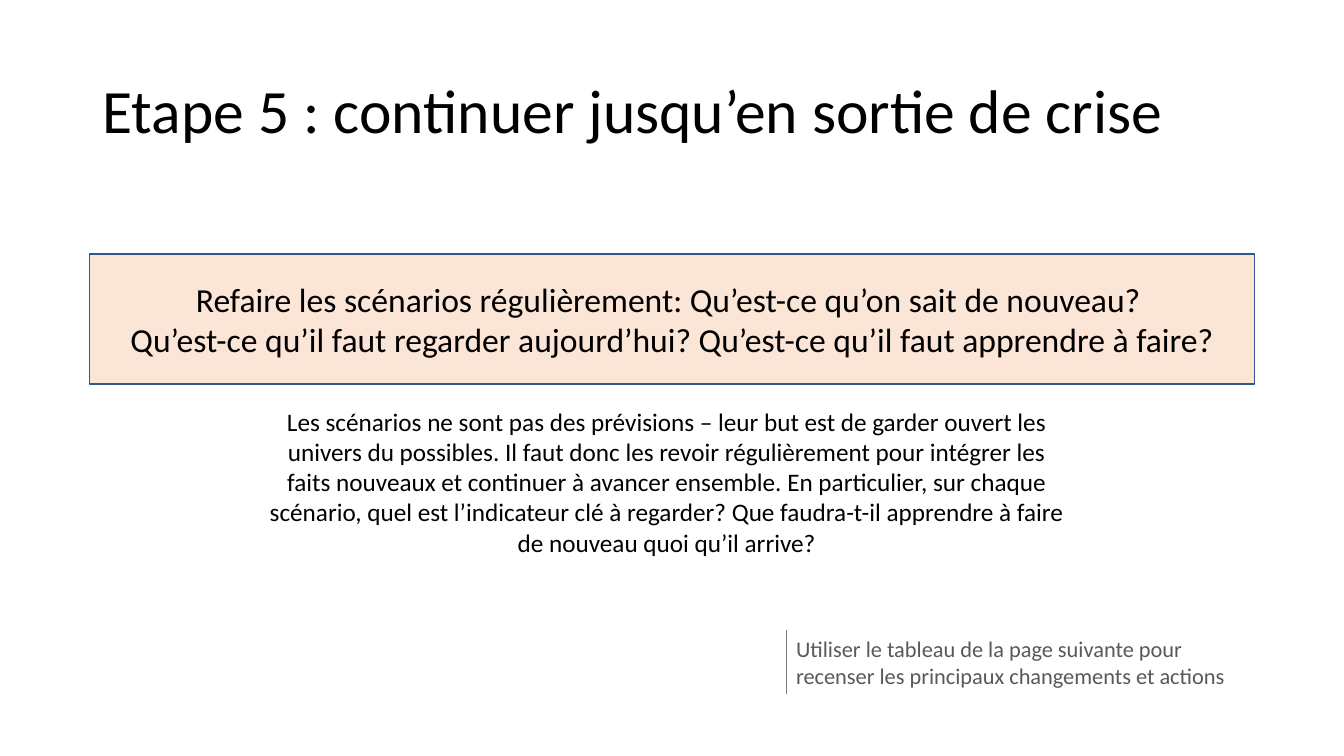
from dataclasses import dataclass

from pptx import Presentation
from pptx.dml.color import RGBColor
from pptx.enum.shapes import MSO_CONNECTOR, MSO_SHAPE
from pptx.enum.text import MSO_ANCHOR, PP_ALIGN
from pptx.oxml.ns import qn
from pptx.slide import Slide
from pptx.text.text import TextFrame
from pptx.util import Pt

FONT = "Calibri"
BLACK = RGBColor(0x00, 0x00, 0x00)
DARK_GREY = RGBColor(0x59, 0x59, 0x59)
RULE_GREY = RGBColor(0x80, 0x80, 0x80)
PEACH = RGBColor(0xFB, 0xE5, 0xD6)
BLUE = RGBColor(0x32, 0x54, 0x91)


@dataclass(frozen=True)
class Box:
    left: float
    top: float
    width: float
    height: float

    def lengths(self) -> tuple[Pt, Pt, Pt, Pt]:
        return Pt(self.left), Pt(self.top), Pt(self.width), Pt(self.height)


@dataclass(frozen=True)
class Passage:
    text: str
    box: Box
    size: float
    color: RGBColor = BLACK
    align: PP_ALIGN = PP_ALIGN.CENTER
    anchor: MSO_ANCHOR = MSO_ANCHOR.TOP


TITLE = Passage(
    "Etape 5 : continuer jusqu’en sortie de crise",
    Box(66, 28.75, 828, 104.4), 44, align=PP_ALIGN.LEFT, anchor=MSO_ANCHOR.MIDDLE,
)
KEY_QUESTIONS = Passage(
    "Refaire les scénarios régulièrement: Qu’est-ce qu’on sait de nouveau? \n"
    "Qu’est-ce qu’il faut regarder aujourd’hui? Qu’est-ce qu’il faut apprendre à faire?",
    Box(64, 181.5, 832.3, 92.8), 24, anchor=MSO_ANCHOR.MIDDLE,
)
EXPLANATION = Passage(
    "Les scénarios ne sont pas des prévisions – leur but est de garder ouvert les "
    "univers du possibles. Il faut donc les revoir régulièrement pour intégrer les "
    "faits nouveaux et continuer à avancer ensemble. En particulier, sur chaque "
    "scénario, quel est l’indicateur clé à regarder? Que faudra-t-il apprendre à faire "
    "de nouveau quoi qu’il arrive?",
    Box(181.4, 286.5, 589.7, 116.6), 18,
)
INSTRUCTION = Passage(
    "Utiliser le tableau de la page suivante pour recenser les principaux "
    "changements et actions",
    Box(561.6, 450, 341.3, 46), 16, DARK_GREY, PP_ALIGN.LEFT,
)


def write(frame: TextFrame, passage: Passage) -> None:
    frame.word_wrap = True
    frame.vertical_anchor = passage.anchor
    paragraph = frame.paragraphs[0]
    paragraph.text = passage.text
    paragraph.alignment = passage.align
    for run in paragraph.runs:
        run.font.name = FONT
        run.font.size = Pt(passage.size)
        run.font.color.rgb = passage.color


def add_title(slide: Slide, passage: Passage) -> None:
    title = slide.shapes.title
    title.left, title.top, title.width, title.height = passage.box.lengths()
    write(title.text_frame, passage)
    title.text_frame.paragraphs[0].line_spacing = 0.9


def add_passage(slide: Slide, passage: Passage) -> None:
    write(slide.shapes.add_textbox(*passage.box.lengths()).text_frame, passage)


def add_banner(slide: Slide, passage: Passage) -> None:
    banner = slide.shapes.add_shape(MSO_SHAPE.RECTANGLE, *passage.box.lengths())
    banner.shadow.inherit = False
    banner.fill.solid()
    banner.fill.fore_color.rgb = PEACH
    banner.line.color.rgb = BLUE
    banner.line.width = Pt(1)
    write(banner.text_frame, passage)


def add_left_rule(slide: Slide, box: Box) -> None:
    left, top, _, height = box.lengths()
    rule = slide.shapes.add_connector(
        MSO_CONNECTOR.STRAIGHT, left, top, left, top + height
    )
    rule.line.color.rgb = RULE_GREY
    rule.line.width = Pt(0.5)
    properties = rule.element.find(qn("p:spPr"))
    properties.append(properties.makeelement(qn("a:effectLst"), {}))


def main() -> None:
    deck = Presentation()
    deck.slide_width, deck.slide_height = Pt(960), Pt(540)
    slide = deck.slides.add_slide(deck.slide_layouts.get_by_name("Title Only"))
    add_title(slide, TITLE)
    add_passage(slide, INSTRUCTION)
    add_banner(slide, KEY_QUESTIONS)
    add_passage(slide, EXPLANATION)
    add_left_rule(slide, INSTRUCTION.box)
    deck.save("out.pptx")


if __name__ == "__main__":
    main()
